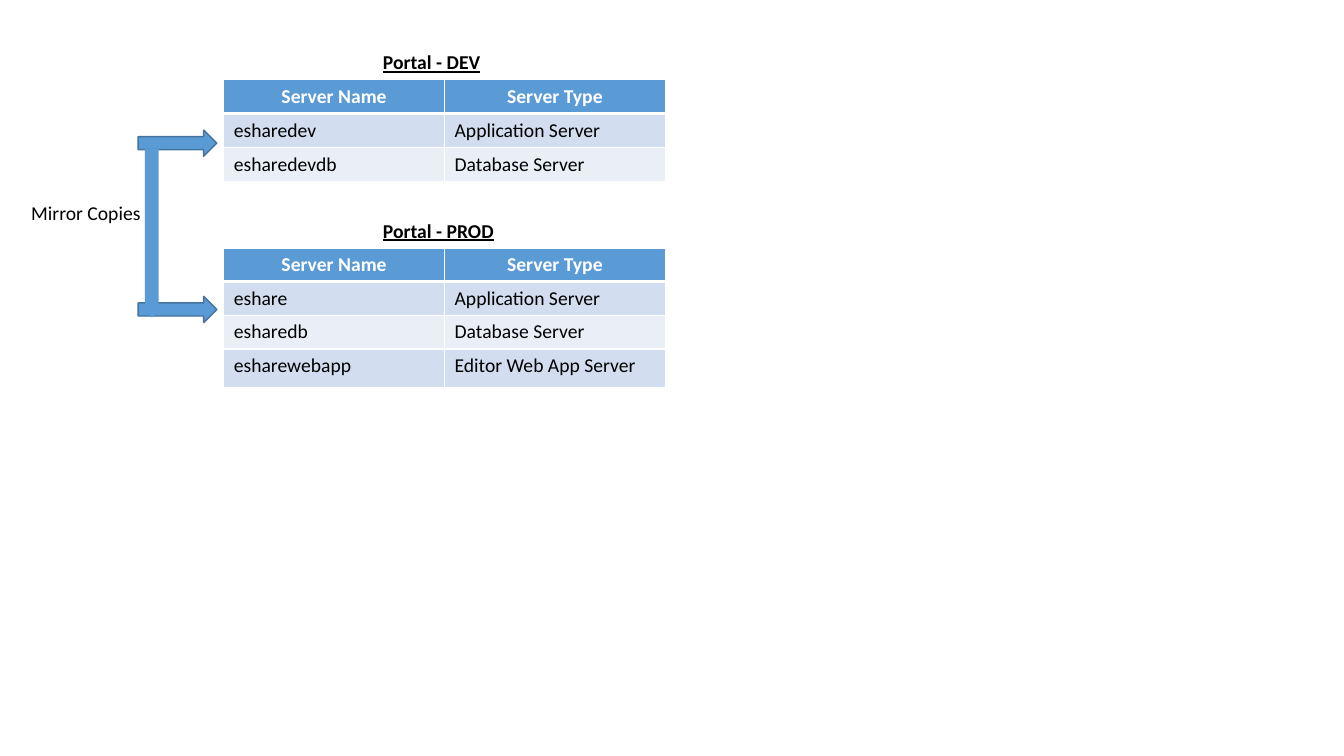
from dataclasses import dataclass

from lxml import etree
from pptx import Presentation
from pptx.dml.color import RGBColor
from pptx.enum.shapes import MSO_SHAPE
from pptx.enum.text import MSO_AUTO_SIZE, PP_ALIGN
from pptx.oxml.ns import qn
from pptx.util import Inches, Pt

RIGHT_ARROW = MSO_SHAPE.RIGHT_ARROW
DOWN_ARROW = MSO_SHAPE.DOWN_ARROW
FIT_SHAPE = MSO_AUTO_SIZE.SHAPE_TO_FIT_TEXT
CENTER = PP_ALIGN.CENTER
LEFT = PP_ALIGN.LEFT


@dataclass(frozen=True)
class Theme:
    font: str = "Calibri"
    size: int = 14
    text: str = "000000"
    white: str = "FFFFFF"
    accent: str = "5B9BD5"
    outline: str = "43739E"
    bands: tuple = ("D2DEEF", "EAEFF7")
    thin: int = 1
    thick: int = 3


THEME = Theme()
WIDTH, HEIGHT = Inches(13.33), Inches(7.5)
TABLE_X, COLUMN_W = 16.65, 16.43
TITLE_X, TITLE_H = 27.76, 4.53
ROW_H = 4.13
ARROW_X, ARROW_W, ARROW_H = 10.28, 5.85, 3.47
HEADER = ("Server Name", "Server Type")
FARMS = (
    ("Portal - DEV", 6, 9.6, 17.2, ROW_H, (
        ("esharedev", "Application Server"),
        ("esharedevdb", "Database Server"),
    )),
    ("Portal - PROD", 28.27, 10.65, 39.2, 5.07, (
        ("eshare", "Application Server"),
        ("esharedb", "Database Server"),
        ("esharewebapp", "Editor Web App Server"),
    )),
)


def across(share):
    return round(WIDTH * share / 100)


def down(share):
    return round(HEIGHT * share / 100)


def box(x, y, w, h):
    return across(x), down(y), across(w), down(h)


def rgb(color):
    return RGBColor.from_string(color)


def format_text(tf, color, bold=False, underline=False, align=LEFT):
    p = tf.paragraphs[0]
    p.alignment = align
    for r in p.runs:
        r.font.name = THEME.font
        r.font.size = Pt(THEME.size)
        r.font.color.rgb = rgb(color)
        r.font.bold = bold
        r.font.underline = underline


def add_label(s, text, x, y, w, heading=False):
    tf = s.shapes.add_textbox(*box(x, y, w, TITLE_H)).text_frame
    tf.text = text
    tf.word_wrap = False
    tf.auto_size = FIT_SHAPE
    format_text(tf, THEME.text, heading, heading)


def add_arrow(s, kind, x, y, w, h, outlined=True):
    sp = s.shapes.add_shape(kind, *box(x, y, w, h))
    sp.shadow.inherit = False
    sp.fill.solid()
    sp.fill.fore_color.rgb = rgb(THEME.accent)
    if outlined:
        sp.line.color.rgb = rgb(THEME.outline)
        sp.line.width = Pt(THEME.thin)
    else:
        sp.line.fill.background()


def set_borders(cell, row):
    tc_pr = cell._tc.get_or_add_tcPr()
    widths = {
        "a:lnL": THEME.thin,
        "a:lnR": THEME.thin,
        "a:lnT": THEME.thick if row == 1 else THEME.thin,
        "a:lnB": THEME.thick if row == 0 else THEME.thin,
    }
    for tag, width in widths.items():
        ln = etree.SubElement(tc_pr, qn(tag), w=str(Pt(width)))
        fill = etree.SubElement(ln, qn("a:solidFill"))
        etree.SubElement(fill, qn("a:srgbClr"), val=THEME.white)


def fill_cell(cell, text, row):
    header = row == 0
    cell.text = text
    set_borders(cell, row)
    cell.fill.solid()
    color = THEME.accent if header else THEME.bands[(row - 1) % 2]
    cell.fill.fore_color.rgb = rgb(color)
    format_text(cell.text_frame, THEME.white if header else THEME.text,
                bold=header, align=CENTER if header else LEFT)


def add_server_table(s, y, servers, last_h):
    rows = (HEADER, *servers)
    heights = [ROW_H] * len(servers) + [last_h]
    frame = s.shapes.add_table(
        len(rows), len(HEADER),
        *box(TABLE_X, y, COLUMN_W * len(HEADER), sum(heights)))
    table = frame.table
    table.horz_banding = False
    for column in table.columns:
        column.width = across(COLUMN_W)
    for i, (texts, height) in enumerate(zip(rows, heights)):
        table.rows[i].height = down(height)
        for j, text in enumerate(texts):
            fill_cell(table.cell(i, j), text, i)


def main():
    prs = Presentation()
    prs.slide_width, prs.slide_height = WIDTH, HEIGHT
    s = prs.slides.add_slide(prs.slide_layouts[6])
    for title, y, title_w, arrow_y, last_h, servers in FARMS:
        add_server_table(s, y + TITLE_H, servers, last_h)
        add_label(s, title, TITLE_X, y, title_w, heading=True)
        add_arrow(s, RIGHT_ARROW, ARROW_X, arrow_y, ARROW_W, ARROW_H)
    add_arrow(s, DOWN_ARROW, ARROW_X, 19.73, 2.03, 22.27, outlined=False)
    add_label(s, "Mirror Copies", 1.58, 25.87, 9.75)
    prs.save("out.pptx")


if __name__ == "__main__":
    main()
